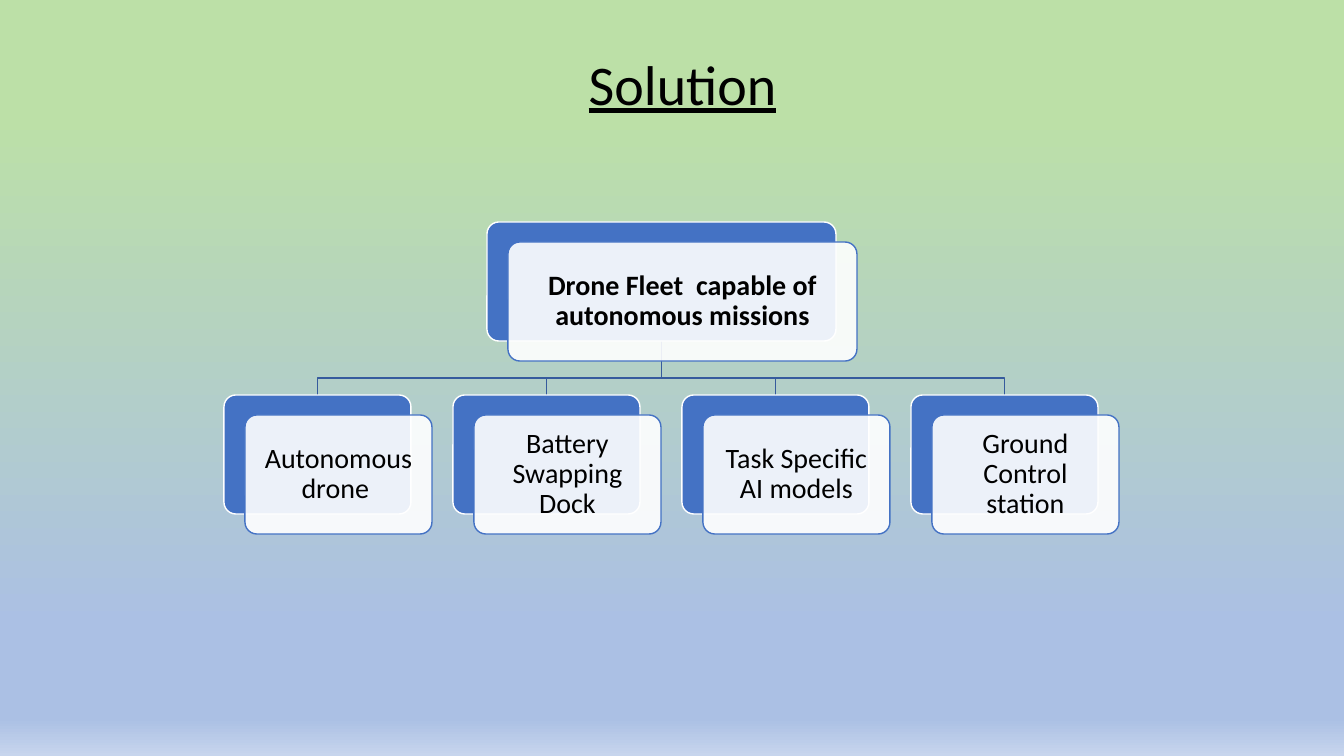
from lxml.etree import SubElement
from pptx import Presentation
from pptx.dml.color import RGBColor
from pptx.enum.shapes import MSO_SHAPE as Shape
from pptx.enum.text import MSO_ANCHOR as Anchor, PP_ALIGN as Align
from pptx.oxml.ns import qn
from pptx.util import Emu, Pt

COLORS = {
    "text": "000000",
    "white": "FFFFFF",
    "blue": "4472C4",
    "link": "365B9D",
    "green": "BCE0A7",
    "periwinkle": "ABC0E4",
    "pale": "C7D5ED",
}
BACKGROUND_STOPS = [(15, "green"), (83, "periwinkle"), (95, "periwinkle"), (100, "pale")]
ROOT = "Drone Fleet  capable of autonomous missions"
PARTS = [
    "Autonomous drone ",
    "Battery Swapping Dock",
    "Task Specific AI models",
    "Ground Control station",
]
CARD_HEIGHT, ROOT_WIDTH, PART_WIDTH = 119, 349, 187
PART_PITCH = 229
FRONT_SHIFT = (21, 20)


def px(length):
    return Emu(round(length * 914400 / 100.8))


def color(name):
    return RGBColor.from_string(COLORS[name])


def write(shape, text, size=20, bold=False, underline=False, margin=8):
    frame = shape.text_frame
    frame.word_wrap = True
    frame.vertical_anchor = Anchor.MIDDLE
    frame.margin_left = frame.margin_right = px(margin)
    frame.margin_top = frame.margin_bottom = px(margin)
    para = frame.paragraphs[0]
    para.alignment = Align.CENTER
    para.line_spacing = 0.9
    span = para.add_run()
    span.text = text
    span.font.name = "Calibri"
    span.font.size = Pt(size)
    span.font.bold = bold
    span.font.underline = underline
    span.font.color.rgb = color("text")


def paint_background(slide):
    fill = slide.background.fill
    fill.gradient()
    fill.gradient_angle = 270
    stops = slide.element.find(".//" + qn("a:gsLst"))
    for stop in list(stops):
        stops.remove(stop)
    for percent, name in BACKGROUND_STOPS:
        stop = SubElement(stops, qn("a:gs"), pos=str(percent * 1000))
        SubElement(stop, qn("a:srgbClr"), val=COLORS[name])


def add_title(slide, text, left, top, width, height):
    title = slide.shapes.title
    title.left, title.top = px(left), px(top)
    title.width, title.height = px(width), px(height)
    write(title, text, size=40, underline=True)


def add_panel(slide, left, top, width, fill, line):
    panel = slide.shapes.add_shape(
        Shape.ROUNDED_RECTANGLE, px(left), px(top), px(width), px(CARD_HEIGHT))
    panel.adjustments[0] = 0.1
    panel.shadow.inherit = False
    panel.fill.solid()
    panel.fill.fore_color.rgb = color(fill)
    panel.line.color.rgb = color(line)
    panel.line.width = Pt(1)
    return panel


def add_card(slide, text, left, top, width, bold=False):
    """Place a blue panel with a translucent white text panel shifted over it."""
    add_panel(slide, left, top, width, "blue", "white")
    right_shift, down_shift = FRONT_SHIFT
    front = add_panel(slide, left + right_shift, top + down_shift, width, "white", "blue")
    fill_color = front.element.spPr.find(qn("a:solidFill"))[0]
    SubElement(fill_color, qn("a:alpha"), val="90000")
    write(front, text, bold=bold)


def add_link(slide, start, bend, end):
    """Draw a stepped line down from start to the height bend, across, and down to end."""
    builder = slide.shapes.build_freeform(px(start[0]), px(start[1]))
    corners = [(start[0], bend), (end[0], bend), end]
    builder.add_line_segments([(px(x), px(y)) for x, y in corners], close=False)
    link = builder.convert_to_shape()
    link.shadow.inherit = False
    link.fill.background()
    link.line.color.rgb = color("link")
    link.line.width = Pt(1)


def add_hierarchy(slide, left, top):
    root_left = left + 263
    root_bottom = top + CARD_HEIGHT
    parts_top = root_bottom + 54
    root_end = (root_left + ROOT_WIDTH / 2, root_bottom)
    part_lefts = [left + PART_PITCH * index for index in range(len(PARTS))]
    for part_left in reversed(part_lefts):
        add_link(slide, root_end, root_bottom + 37, (part_left + PART_WIDTH / 2, parts_top))
    add_card(slide, ROOT, root_left, top, ROOT_WIDTH, bold=True)
    for text, part_left in zip(PARTS, part_lefts):
        add_card(slide, text, part_left, parts_top, PART_WIDTH)


def main():
    deck = Presentation()
    deck.slide_width, deck.slide_height = px(1344), px(756)
    slide = deck.slides.add_slide(deck.slide_layouts[5])
    paint_background(slide)
    add_title(slide, "Solution", 103, 14, 1159, 146)
    add_hierarchy(slide, 224, 222)
    deck.save("out.pptx")


if __name__ == "__main__":
    main()
